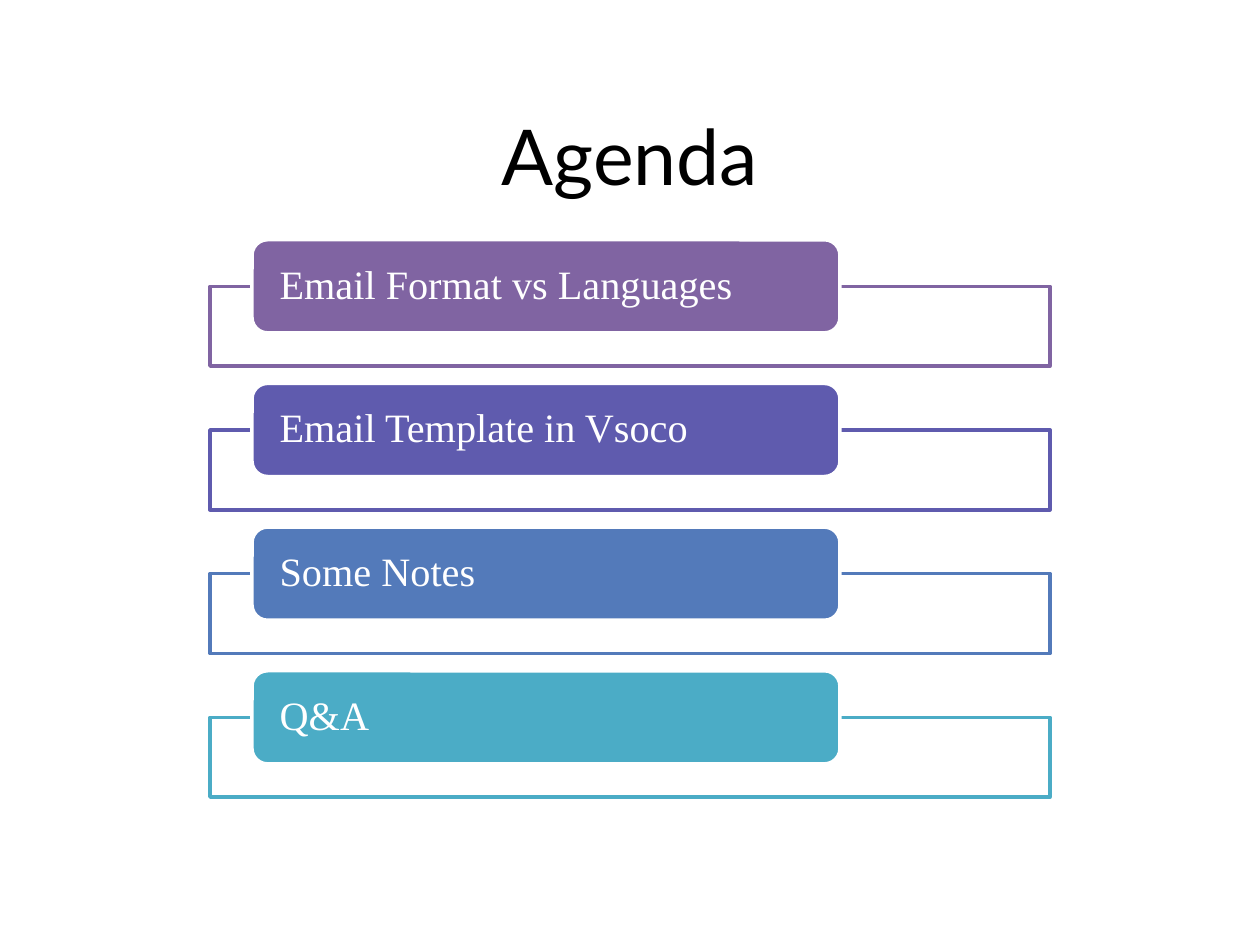
from lxml import etree
from pptx import Presentation
from pptx.dml.color import RGBColor
from pptx.enum.shapes import MSO_SHAPE
from pptx.enum.text import MSO_ANCHOR, PP_ALIGN
from pptx.oxml.ns import qn
from pptx.util import Pt

RECTANGLE, ROUNDED = MSO_SHAPE.RECTANGLE, MSO_SHAPE.ROUNDED_RECTANGLE
MIDDLE = MSO_ANCHOR.MIDDLE
LEFT, CENTER = PP_ALIGN.LEFT, PP_ALIGN.CENTER

COLORS = {
    "text": "000000",
    "white": "FFFFFF",
    "purple": "8064A2",
    "indigo": "5F5BAE",
    "blue": "537ABA",
    "teal": "4BACC6",
}
AGENDA = [
    ("Email Format vs Languages", "purple"),
    ("Email Template in Vsoco", "indigo"),
    ("Some Notes", "blue"),
    ("Q&A", "teal"),
]
TITLE_BOX = (36, 59, 648, 58.5)
AGENDA_BOX = (120, 137, 480, 318.5)
ROW_PITCH = 82.1


def color(name):
    """Return the named palette colour."""
    return RGBColor.from_string(COLORS[name])


def write(shape, text, align, margin, font_format, color_name):
    """Put one formatted line of text in a shape."""
    frame = shape.text_frame
    frame_format = {
        "word_wrap": True, "vertical_anchor": MIDDLE,
        "margin_left": Pt(margin), "margin_right": Pt(margin),
        "margin_top": 0, "margin_bottom": 0,
    }
    for name, value in frame_format.items():
        setattr(frame, name, value)
    paragraph = frame.paragraphs[0]
    paragraph.text = text
    paragraph.alignment = align
    for name, value in font_format.items():
        setattr(paragraph.font, name, value)
    paragraph.font.color.rgb = color(color_name)
    return paragraph


def add_box(slide, kind, box, fill, line):
    """Add a filled and outlined shape."""
    shape = slide.shapes.add_shape(kind, *(Pt(value) for value in box))
    shape.shadow.inherit = False
    shape.fill.solid()
    shape.fill.fore_color.rgb = color(fill)
    shape.line.color.rgb = color(line)
    shape.line.width = Pt(2)
    return shape


def add_title(slide, box, text):
    """Place the slide title in the given box."""
    title = slide.shapes.title
    for name, value in zip(("left", "top", "width", "height"), box):
        setattr(title, name, Pt(value))
    write(title, text, CENTER, 7.2, {"name": "Lato", "size": Pt(44)}, "text")


def add_agenda_row(slide, box, text, color_name):
    """Draw a frame with a coloured label over its top edge."""
    left, top, width, height = box
    label_height = 53.2
    frame_top = top + label_height / 2
    frame_box = (left, frame_top, width, top + height - frame_top)
    frame = add_box(slide, RECTANGLE, frame_box, "white", color_name)
    fill_color = frame.fill._xPr.find(qn("a:solidFill"))[0]
    etree.SubElement(fill_color, qn("a:alpha"), val="90000")

    label_box = (left + width * 0.05, top, width * 0.7, label_height)
    label = add_box(slide, ROUNDED, label_box, color_name, "white")
    font_format = {"name": "Times New Roman", "size": Pt(23)}
    paragraph = write(label, text, LEFT, 13.2, font_format, "white")
    paragraph.line_spacing = 0.9


def add_agenda(slide, box, items):
    """Stack the agenda rows at an equal pitch inside the box."""
    left, top, width, height = box
    row_height = height - ROW_PITCH * (len(items) - 1)
    for index, (text, color_name) in enumerate(items):
        row_box = (left, top + index * ROW_PITCH, width, row_height)
        add_agenda_row(slide, row_box, text, color_name)


def main():
    """Build and save the agenda slide."""
    presentation = Presentation()
    presentation.slide_width, presentation.slide_height = Pt(720), Pt(540)
    slide = presentation.slides.add_slide(presentation.slide_layouts[5])
    add_title(slide, TITLE_BOX, "Agenda")
    add_agenda(slide, AGENDA_BOX, AGENDA)
    presentation.save("out.pptx")


if __name__ == "__main__":
    main()
